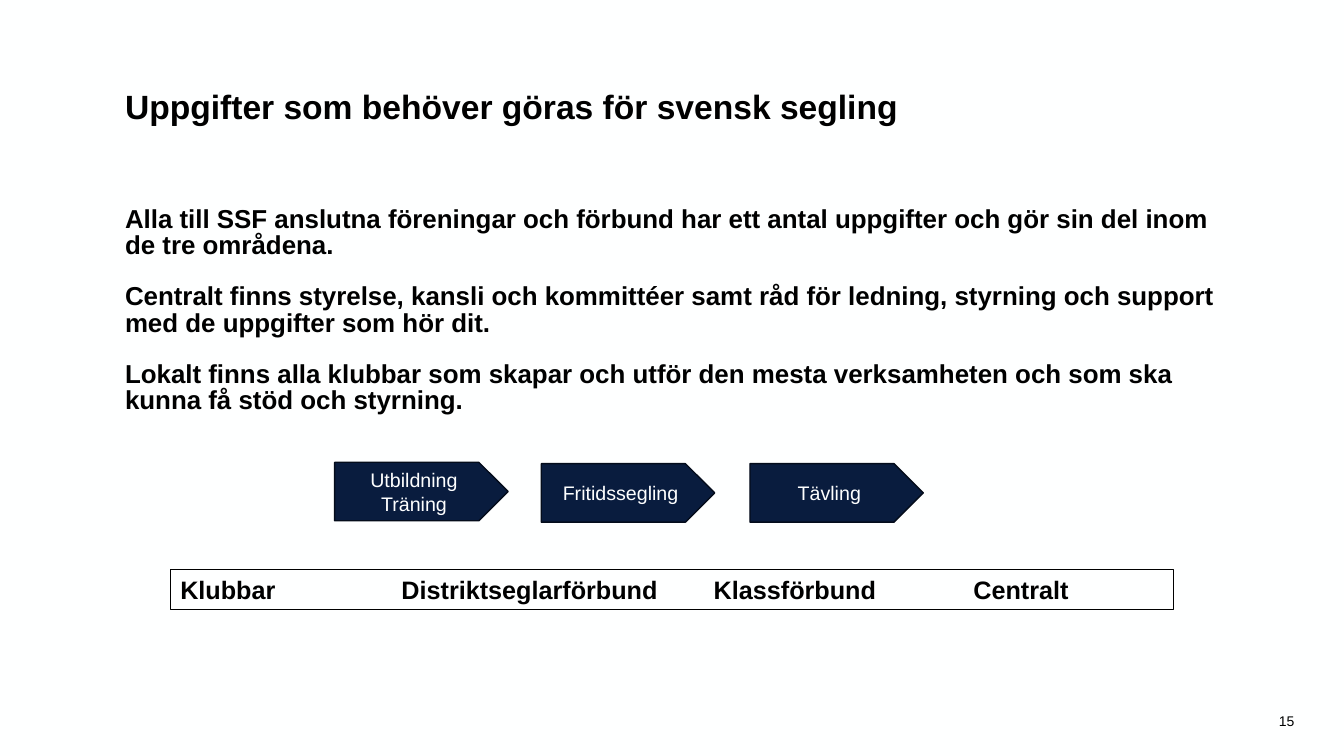
from dataclasses import dataclass

import lxml.etree
import pptx
import pptx.dml.color
import pptx.enum.shapes
import pptx.enum.text
import pptx.oxml.ns
import pptx.shapes.autoshape
import pptx.slide
import pptx.util

Pt = pptx.util.Pt
Color = pptx.dml.color.RGBColor
Align = pptx.enum.text.PP_ALIGN
Anchor = pptx.enum.text.MSO_ANCHOR
ShapeType = pptx.enum.shapes.MSO_SHAPE


@dataclass(frozen=True)
class Theme:
    font: str = "Arial"
    background: Color = Color.from_string("FEFFFF")
    text: Color = Color.from_string("000000")
    arrow_fill: Color = Color.from_string("091C3E")
    arrow_line: Color = Color.from_string("040C1B")
    arrow_text: Color = Color.from_string("FEFFFF")
    title_size: float = 24
    body_size: float = 18.5
    level_size: float = 18
    arrow_size: float = 14
    number_size: float = 10


THEME = Theme()


@dataclass(frozen=True)
class Box:
    left: float
    top: float
    width: float
    height: float

    def lengths(self) -> list[pptx.util.Length]:
        return [Pt(value) for value in (self.left, self.top, self.width, self.height)]


@dataclass(frozen=True)
class TextStyle:
    size: float
    bold: bool = False
    color: Color = THEME.text
    alignment: Align = Align.LEFT
    anchor: Anchor = Anchor.MIDDLE
    line_spacing: float = 1.0
    gap: float = 0
    margins: tuple[float, float, float, float] = (7.2, 3.6, 7.2, 3.6)


@dataclass(frozen=True)
class TextBlock:
    box: Box
    paragraphs: tuple[str, ...]
    style: TextStyle


@dataclass(frozen=True)
class AreaArrow:
    box: Box
    lines: tuple[str, ...]


@dataclass(frozen=True)
class Level:
    name: str
    tab: float


TEXT_BLOCKS = (
    TextBlock(Box(715.68, 500.4, 216, 28.8), ("15",),
              TextStyle(THEME.number_size, alignment=Align.RIGHT)),
    TextBlock(
        Box(89.28, 164.88, 781.2, 150.48),
        (
            "Alla till SSF anslutna föreningar och förbund har ett antal uppgifter "
            "och gör sin del inom de tre områdena.",
            "Centralt finns styrelse, kansli och kommittéer samt råd för ledning, "
            "styrning och support med de uppgifter som hör dit.",
            "Lokalt finns alla klubbar som skapar och utför den mesta verksamheten "
            "och som ska kunna få stöd och styrning.",
        ),
        TextStyle(THEME.body_size, bold=True, line_spacing=0.84, gap=17.86,
                  margins=(0, 0, 0, 35.7)),
    ),
    TextBlock(Box(89.28, 45.36, 781.2, 64.8),
              ("Uppgifter som behöver göras för svensk segling",),
              TextStyle(THEME.title_size, bold=True, line_spacing=0.9,
                        margins=(0, 0, 0, 0))),
)
AREA_ARROWS = (
    AreaArrow(Box(239.04, 330.2, 123.84, 41.76), ("Utbildning", "Träning")),
    AreaArrow(Box(386.64, 331.2, 123.84, 41.76), ("Fritidssegling",)),
    AreaArrow(Box(535.68, 331.2, 123.84, 41.76), ("Tävling",)),
)
LEVEL_BOX = Box(121.68, 406.8, 716.4, 28.8)
LEVELS = (
    Level("Klubbar", 0),
    Level("Distriktseglarförbund", 158),
    Level("Klassförbund", 381),
    Level("Centralt", 566.5),
)


def set_attributes(target: object, values: dict[str, object]) -> None:
    for name, value in values.items():
        setattr(target, name, value)


def write_text(shape: pptx.shapes.autoshape.Shape, texts: tuple[str, ...],
               style: TextStyle, tabs: tuple[float, ...] = ()) -> None:
    frame = shape.text_frame
    left, top, right, bottom = map(Pt, style.margins)
    set_attributes(frame, {
        "word_wrap": True, "vertical_anchor": style.anchor,
        "margin_left": left, "margin_top": top,
        "margin_right": right, "margin_bottom": bottom,
    })
    frame.text = "\n".join(texts)
    for index, paragraph in enumerate(frame.paragraphs):
        set_attributes(paragraph, {
            "alignment": style.alignment,
            "line_spacing": style.line_spacing,
            "space_before": Pt(style.gap if index else 0),
        })
        if tabs:
            add_tab_stops(paragraph, tabs)
        for run in paragraph.runs:
            set_attributes(run.font, {
                "name": THEME.font, "size": Pt(style.size), "bold": style.bold})
            run.font.color.rgb = style.color


def add_tab_stops(paragraph: object, tabs: tuple[float, ...]) -> None:
    qn = pptx.oxml.ns.qn
    properties = paragraph._p.get_or_add_pPr()
    tab_list = lxml.etree.SubElement(properties, qn("a:tabLst"))
    for tab in tabs:
        lxml.etree.SubElement(tab_list, qn("a:tab"), pos=str(int(Pt(tab))), algn="l")


def add_outlined_shape(slide: pptx.slide.Slide, kind: ShapeType, box: Box,
                       line: Color, fill: Color | None = None
                       ) -> pptx.shapes.autoshape.Shape:
    shape = slide.shapes.add_shape(kind, *box.lengths())
    shape.shadow.inherit = False
    if fill is None:
        shape.fill.background()
    else:
        shape.fill.solid()
        shape.fill.fore_color.rgb = fill
    shape.line.color.rgb = line
    shape.line.width = Pt(1)
    return shape


def add_levels(slide: pptx.slide.Slide) -> None:
    """Draw the frame that lists the organisation levels at tab stops."""
    shape = add_outlined_shape(slide, ShapeType.RECTANGLE, LEVEL_BOX, THEME.text)
    write_text(shape, ("\t".join(level.name for level in LEVELS),),
               TextStyle(THEME.level_size, bold=True, anchor=Anchor.TOP),
               tuple(level.tab for level in LEVELS[1:]))


def main() -> None:
    presentation = pptx.Presentation()
    set_attributes(presentation, {"slide_width": Pt(960), "slide_height": Pt(540)})
    slide = presentation.slides.add_slide(presentation.slide_layouts[6])
    slide.background.fill.solid()
    slide.background.fill.fore_color.rgb = THEME.background

    for block in TEXT_BLOCKS:
        text_box = slide.shapes.add_textbox(*block.box.lengths())
        write_text(text_box, block.paragraphs, block.style)
    add_levels(slide)
    arrow_style = TextStyle(THEME.arrow_size, color=THEME.arrow_text,
                            alignment=Align.CENTER)
    for arrow in AREA_ARROWS:
        shape = add_outlined_shape(slide, ShapeType.PENTAGON, arrow.box,
                                   THEME.arrow_line, THEME.arrow_fill)
        write_text(shape, arrow.lines, arrow_style)
    presentation.save("out.pptx")


if __name__ == "__main__":
    main()
